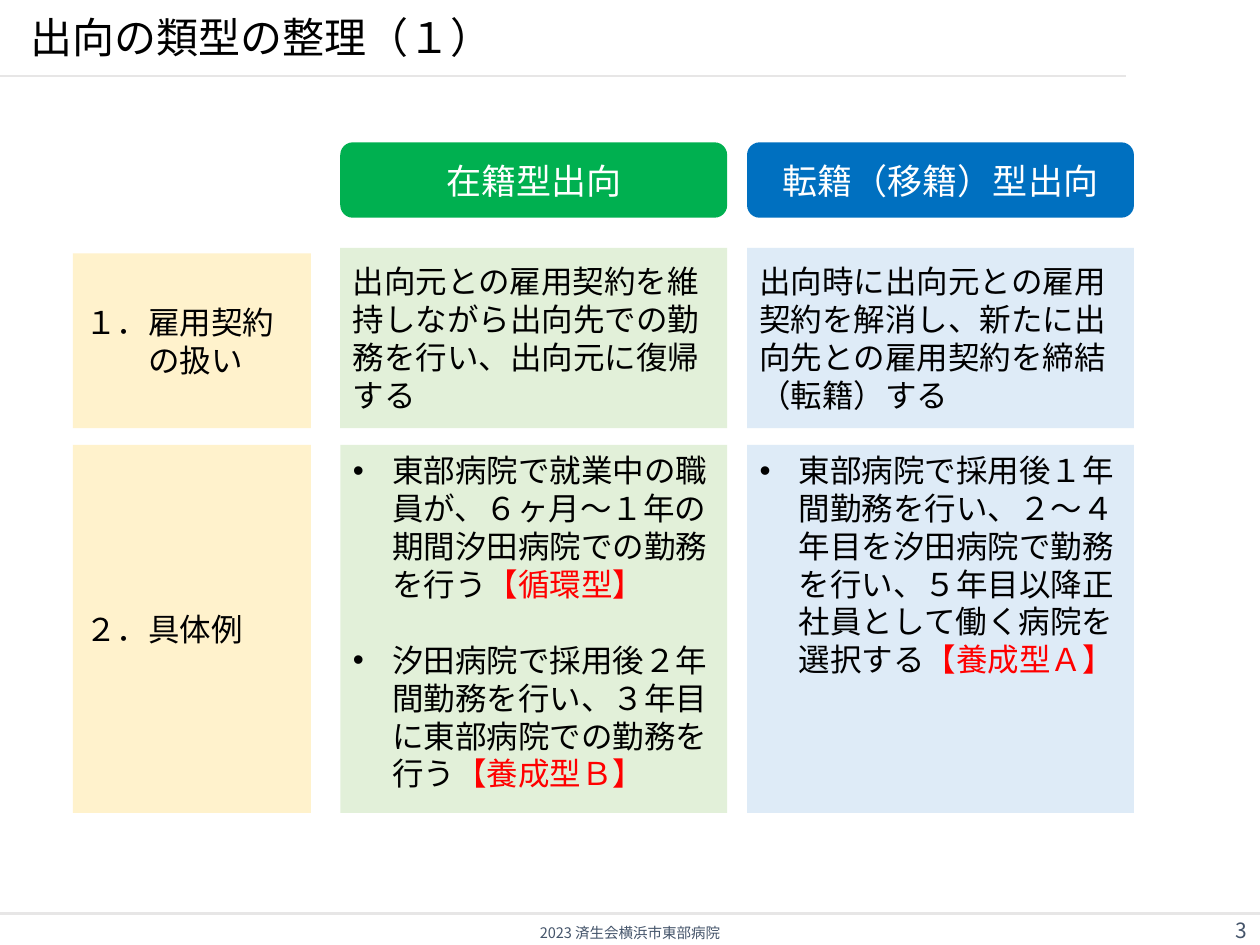
from dataclasses import dataclass

from lxml.etree import SubElement
from pptx import Presentation
from pptx.dml.color import RGBColor
from pptx.enum.lang import MSO_LANGUAGE_ID
from pptx.enum.shapes import MSO_CONNECTOR, MSO_SHAPE
from pptx.enum.text import MSO_ANCHOR, MSO_AUTO_SIZE, PP_ALIGN
from pptx.oxml.ns import qn
from pptx.util import Cm, Pt


@dataclass(frozen=True)
class Theme:
    heading_font: str = "Noto Sans CJK JP"
    body_font: str = "Calibri"
    title_size: float = 24
    header_size: float = 20
    body_size: float = 18
    number_size: float = 12
    footer_size: float = 8.3
    black: str = "000000"
    white: str = "FFFFFF"
    accent: str = "FF0000"
    muted: str = "44546A"
    rule: str = "E7E6E6"
    label: str = "FFF2CC"


THEME = Theme()
WIDTH, HEIGHT = 25.4, 19.05

LABEL_LEFT, LABEL_WIDTH = 1.47, 4.8
COLUMN_LEFT, COLUMN_WIDTH, COLUMN_PITCH = 6.86, 7.8, 8.2
HEADER_TOP, HEADER_HEIGHT = 2.87, 1.52
CONTRACT_TOP, CONTRACT_HEIGHT = 5.0, 3.63
LABEL_INSET = 0.11
EXAMPLE_TOP, EXAMPLE_HEIGHT = 8.97, 7.42
HANGING = 0.79

# header, header fill, cell fill, contract text, examples as (text, type)
COLUMNS = [
    ("在籍型出向", "00B050", "E2F0D9",
     "出向元との雇用契約を維持しながら出向先での勤務を行い、出向元に復帰する",
     [("東部病院で就業中の職員が、６ヶ月～１年の期間汐田病院での勤務を行う", "【循環型】"),
      ("汐田病院で採用後２年間勤務を行い、３年目に東部病院での勤務を行う", "【養成型Ｂ】")]),
    ("転籍（移籍）型出向", "0070C0", "DEEBF7",
     "出向時に出向元との雇用契約を解消し、新たに出向先との雇用契約を締結（転籍）する",
     [("東部病院で採用後１年間勤務を行い、２～４年目を汐田病院で勤務を行い、"
       "５年目以降正社員として働く病院を選択する", "【養成型Ａ】")]),
]


def add_run(p, text, size=THEME.body_size, color=THEME.black, font=THEME.body_font):
    r = p.add_run()
    r.text = text
    r.font.size = Pt(size)
    r.font.name = font
    r.font.language_id = MSO_LANGUAGE_ID.JAPANESE
    r.font.color.rgb = RGBColor.from_string(color)
    SubElement(r.font._element, qn("a:ea"), typeface=font)


def set_indent(p, left, first=0):
    pPr = p._p.get_or_add_pPr()
    pPr.set("marL", str(Cm(left)))
    pPr.set("indent", str(Cm(first)))
    return pPr


def place(sp, left, top, width, height):
    sp.left, sp.top, sp.width, sp.height = map(Cm, (left, top, width, height))


def fill_solid(sp, color):
    sp.fill.solid()
    sp.fill.fore_color.rgb = RGBColor.from_string(color)
    sp.line.fill.background()


def add_box(s, area, color, kind=MSO_SHAPE.RECTANGLE):
    """Add a plain filled shape and return its text frame."""
    sp = s.shapes.add_shape(kind, *map(Cm, area))
    sp.shadow.inherit = False
    fill_solid(sp, color)
    tf = sp.text_frame
    tf.word_wrap = True
    tf.vertical_anchor = MSO_ANCHOR.MIDDLE
    tf.paragraphs[0].alignment = PP_ALIGN.LEFT
    return tf


def add_header(s, area, text, color):
    p = add_box(s, area, color, MSO_SHAPE.ROUNDED_RECTANGLE).paragraphs[0]
    p.alignment = PP_ALIGN.CENTER
    add_run(p, text, THEME.header_size, THEME.white, THEME.heading_font)


def add_label(s, top, height, text, continuation=None):
    tf = add_box(s, (LABEL_LEFT, top, LABEL_WIDTH, height), THEME.label)
    add_run(tf.paragraphs[0], text)
    if continuation:
        p = tf.add_paragraph()
        p.alignment = PP_ALIGN.LEFT
        set_indent(p, 1.27)
        add_run(p, continuation)


def fill_examples(body, area, color, examples):
    place(body, *area)
    fill_solid(body, color)
    tf = body.text_frame
    tf.auto_size = MSO_AUTO_SIZE.NONE
    tf.word_wrap = True
    for i, (text, kind) in enumerate(examples):
        p = tf.add_paragraph() if i else tf.paragraphs[0]
        p.space_before = Pt(22 if i else 0)
        pPr = set_indent(p, HANGING, -HANGING)
        SubElement(pPr, qn("a:buFont"), typeface="Arial")
        SubElement(pPr, qn("a:buChar"), char="•")
        add_run(p, text)
        add_run(p, kind, color=THEME.accent)


def add_rule(s, left, right, y):
    line = s.shapes.add_connector(
        MSO_CONNECTOR.STRAIGHT, Cm(left), Cm(y), Cm(right), Cm(y))
    line.line.color.rgb = RGBColor.from_string(THEME.rule)
    line.line.width = Pt(1.5)
    SubElement(line._element.spPr, qn("a:effectLst"))


def add_note(s, area, text, size, align):
    tf = s.shapes.add_textbox(*map(Cm, area)).text_frame
    tf.word_wrap = True
    tf.vertical_anchor = MSO_ANCHOR.MIDDLE
    p = tf.paragraphs[0]
    p.alignment = align
    add_run(p, text, size, THEME.muted, THEME.heading_font)


def set_title(title, text):
    place(title, 0.36, 0.28, 20.42, 0.97)
    tf = title.text_frame
    tf.auto_size = MSO_AUTO_SIZE.NONE
    tf.word_wrap = False
    tf.vertical_anchor = MSO_ANCHOR.BOTTOM
    tf.margin_bottom = 0
    p = tf.paragraphs[0]
    p.alignment = PP_ALIGN.LEFT
    add_run(p, text, THEME.title_size, font=THEME.heading_font)


def main():
    prs = Presentation()
    prs.slide_width, prs.slide_height = Cm(WIDTH), Cm(HEIGHT)
    s = prs.slides.add_slide(prs.slide_layouts.get_by_name("Two Content"))

    add_rule(s, 0, 22.7, 1.53)
    add_rule(s, 0, WIDTH, 18.41)
    add_note(s, (0, 18.44, WIDTH, 0.74), "2023 済生会横浜市東部病院",
             THEME.footer_size, PP_ALIGN.CENTER)
    add_note(s, (20.12, 18.44, 5.28, 0.64), "3", THEME.number_size, PP_ALIGN.RIGHT)
    set_title(s.shapes.title, "出向の類型の整理（１）")

    add_label(s, CONTRACT_TOP + LABEL_INSET, CONTRACT_HEIGHT - LABEL_INSET,
              "１．雇用契約", "の扱い")
    add_label(s, EXAMPLE_TOP, EXAMPLE_HEIGHT, "２．具体例")

    for i, (header, strong, pale, contract, examples) in enumerate(COLUMNS):
        left = COLUMN_LEFT + i * COLUMN_PITCH
        add_header(s, (left, HEADER_TOP, COLUMN_WIDTH, HEADER_HEIGHT), header, strong)
        tf = add_box(s, (left, CONTRACT_TOP, COLUMN_WIDTH, CONTRACT_HEIGHT), pale)
        add_run(tf.paragraphs[0], contract)
        fill_examples(s.placeholders[i + 1],
                      (left, EXAMPLE_TOP, COLUMN_WIDTH, EXAMPLE_HEIGHT), pale, examples)

    prs.save("out.pptx")


if __name__ == "__main__":
    main()
